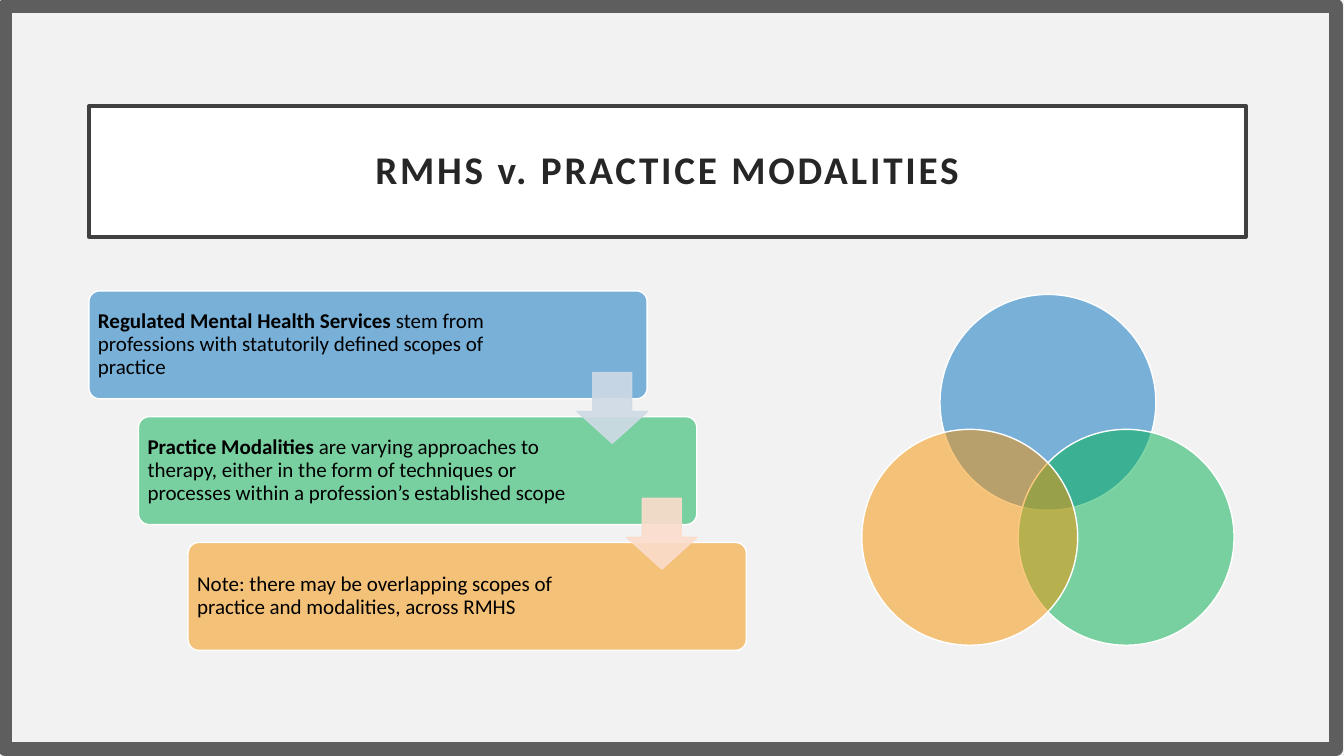
from pptx import Presentation
from pptx.dml.color import RGBColor
from pptx.enum.shapes import MSO_SHAPE
from pptx.enum.text import MSO_ANCHOR, PP_ALIGN
from pptx.oxml.ns import qn
from pptx.util import Cm, Pt
from lxml.etree import SubElement

PAPER = RGBColor(0xF2, 0xF2, 0xF2)
WHITE = RGBColor(0xFF, 0xFF, 0xFF)
BLACK = RGBColor(0x00, 0x00, 0x00)
INK = RGBColor(0x26, 0x26, 0x26)
TITLE_EDGE = RGBColor(0x40, 0x40, 0x40)
FRAME_GRAY = RGBColor(0x5E, 0x5E, 0x5E)
BLUE = RGBColor(0x00, 0x70, 0xC0)
GREEN = RGBColor(0x00, 0xB0, 0x50)
ORANGE = RGBColor(0xF6, 0x92, 0x00)
PALE_BLUE = RGBColor(0xCF, 0xDA, 0xE5)
PALE_PEACH = RGBColor(0xFB, 0xDC, 0xCC)


def draw(shapes, kind, left, top, width, height, fill, edge, weight=1, opacity=100, adjust=()):
    shape = shapes.add_shape(kind, Cm(left), Cm(top), Cm(width), Cm(height))
    shape.shadow.inherit = False
    for index, value in enumerate(adjust):
        shape.adjustments[index] = value
    if fill is None:
        shape.fill.background()
    else:
        shape.fill.solid()
        shape.fill.fore_color.rgb = fill
    shape.line.color.rgb = edge
    shape.line.width = Pt(weight)
    if opacity < 100:
        for color in list(shape._element.spPr.iter(qn("a:srgbClr"))):
            if color.get("val") == str(fill):
                SubElement(color, qn("a:alpha")).set("val", str(opacity * 1000))
    return shape


def write(box, text, bold_lead="", size=15, color=BLACK, align=PP_ALIGN.LEFT, inset=0.15, spacing=0):
    frame = box.text_frame
    frame.word_wrap = True
    frame.vertical_anchor = MSO_ANCHOR.MIDDLE
    frame.margin_left = frame.margin_right = Cm(inset)
    frame.margin_top = frame.margin_bottom = Cm(inset)
    para = frame.paragraphs[0]
    para.alignment = align
    para.line_spacing = 0.9
    for words, bold in ((bold_lead, True), (text, False)):
        if words:
            span = para.add_run()
            span.text = words
            span.font.name = "Calibri"
            span.font.size = Pt(size)
            span.font.bold = bold
            span.font.color.rgb = color
            if spacing:
                span._r.get_or_add_rPr().set("spc", str(spacing * 100))


deck = Presentation()
deck.slide_width, deck.slide_height = Cm(33.87), Cm(19.05)
page = deck.slides.add_slide(deck.slide_layouts[6])
page.background.fill.solid()
page.background.fill.fore_color.rgb = PAPER

title = draw(page.shapes, MSO_SHAPE.RECTANGLE, 2.24, 2.67, 29.16, 3.3, WHITE, TITLE_EDGE, weight=2.5)
write(title, "", bold_lead="RMHS v. PRACTICE MODALITIES", size=28, color=INK,
      align=PP_ALIGN.CENTER, inset=0.5, spacing=2)

STEPS = [
    (BLUE, "Regulated Mental Health Services ",
     "stem from professions with statutorily defined scopes of practice"),
    (GREEN, "Practice Modalities ",
     "are varying approaches to therapy, either in the form of techniques or "
     "processes within a profession’s established scope"),
    (ORANGE, "",
     "Note: there may be overlapping scopes of practice and modalities, across RMHS"),
]
staircase = page.shapes.add_group_shape()
for index, (color, lead, text) in enumerate(STEPS):
    left, top = 2.24 + 1.25 * index, 7.33 + 3.17 * index
    draw(staircase.shapes, MSO_SHAPE.ROUNDED_RECTANGLE, left, top, 14.07, 2.72,
         color, WHITE, opacity=50, adjust=(0.1,))
    box = staircase.shapes.add_textbox(Cm(left + 0.08), Cm(top + 0.08), Cm(10.95), Cm(2.56))
    write(box, text, bold_lead=lead)

for index, color in enumerate((PALE_BLUE, PALE_PEACH)):
    draw(staircase.shapes, MSO_SHAPE.DOWN_ARROW, 14.54 + 1.25 * index, 9.39 + 3.17 * index,
         1.78, 1.78, color, color, opacity=90, adjust=(0.55, 0.45))

draw(page.shapes, MSO_SHAPE.RECTANGLE, 0.13, 0.15, 33.55, 18.72, None, FRAME_GRAY, weight=10)

venn = page.shapes.add_group_shape()
for color, shift, drop in ((BLUE, 0, 0), (GREEN, 1.97, 3.4), (ORANGE, -1.97, 3.4)):
    draw(venn.shapes, MSO_SHAPE.OVAL, 23.69 + shift, 7.42 + drop, 5.44, 5.44,
         color, WHITE, opacity=50)

deck.save("out.pptx")
